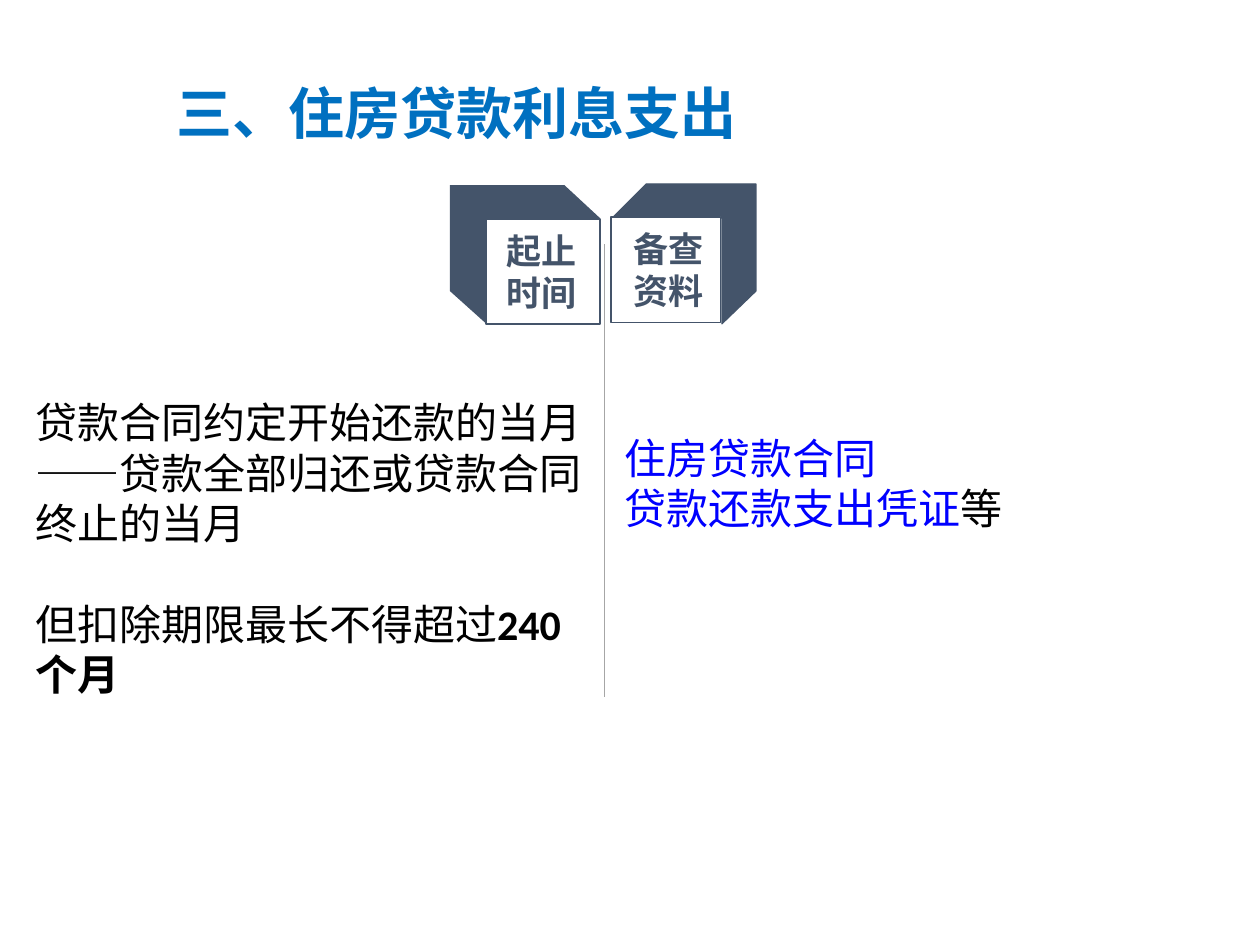
"""Build a slide on the period and records for housing loan interest."""
from lxml import etree
from pptx import Presentation
from pptx.dml.color import RGBColor
from pptx.enum.shapes import MSO_CONNECTOR, MSO_SHAPE
from pptx.enum.text import MSO_ANCHOR, MSO_AUTO_SIZE, PP_ALIGN
from pptx.oxml.ns import qn
from pptx.util import Inches, Pt

CJK = "Noto Sans CJK SC"
SLATE, BLACK, BLUE, WHITE = "44546A", "000000", "0000FF", "FFFFFF"


def rgb(value):
    return RGBColor.from_string(value)


def add_run(p, text, size, color, font, bold=False):
    r = p.add_run()
    r.text = text
    r.font.size, r.font.bold, r.font.name = Pt(size), bold, font
    r.font.color.rgb = rgb(color)
    etree.SubElement(r._r.get_or_add_rPr(), qn("a:ea")).set("typeface", CJK)


prs = Presentation()
prs.slide_width, prs.slide_height = Inches(10), Inches(7.5)
s = prs.slides.add_slide(prs.slide_layouts[5])

title = s.shapes.title
title.left, title.top, title.width, title.height = map(Inches, (1.3, 0.45, 7.84, 0.61))
tf = title.text_frame
tf.auto_size = MSO_AUTO_SIZE.NONE
tf.vertical_anchor = MSO_ANCHOR.MIDDLE
p = tf.paragraphs[0]
p.alignment, p.line_spacing = PP_ALIGN.LEFT, 1.5
add_run(p, "三、住房贷款利息支出", 32, "0070C0", CJK, True)

divider = s.shapes.add_connector(
    MSO_CONNECTOR.STRAIGHT, Inches(4.8), Inches(1.94), Inches(4.8), Inches(5.53))
divider.line.color.rgb, divider.line.width = rgb("A6A6A6"), Pt(0.5)
etree.SubElement(divider._element.spPr, qn("a:effectLst"))

folds = [
    [(3.57, 1.47), (3.57, 2.31), (3.86, 2.57), (3.86, 1.73), (4.76, 1.73), (4.48, 1.47)],
    [(6, 1.46), (6, 2.31), (5.73, 2.57), (5.73, 1.73), (4.86, 1.73), (5.13, 1.46)],
]
faces = [(3.86, 1.74, 0.9, 0.83), (4.85, 1.72, 0.87, 0.84)]
for outline, face, edge in zip(folds, faces, (0, 0.75)):
    points = [(Inches(x), Inches(y)) for x, y in outline]
    fb = s.shapes.build_freeform(*points[0])
    fb.add_line_segments(points[1:], close=True)
    fold = fb.convert_to_shape()
    front = s.shapes.add_shape(MSO_SHAPE.RECTANGLE, *map(Inches, face))
    for sp, fill, width in ((fold, SLATE, edge), (front, WHITE, 1)):
        sp.shadow.inherit = False
        sp.fill.solid()
        sp.fill.fore_color.rgb = rgb(fill)
        if width:
            sp.line.color.rgb, sp.line.width = rgb(SLATE), Pt(width)
        else:
            sp.line.fill.background()

texts = [
    ((0.18, 3.1, 4.58, 2.52), True, 24, 28.8, [
        [("贷款合同约定开始还款的当月", BLACK, "Arial", False),
         ("——", BLACK, "Calibri", False),
         ("贷款全部归还或贷款合同终止的当月", BLACK, "Arial", False)],
        [("但扣除期限最长不得超过", BLACK, "Arial", False),
         ("240", BLACK, "Calibri", True),
         ("个月", BLACK, "Arial", True)]]),
    ((4.86, 3.38, 4.8, 0.91), True, 24, 0, [
        [("住房贷款合同", BLUE, "Arial", False)],
        [("贷款还款支出凭证", BLUE, "Arial", False), ("等", BLACK, "Arial", False)]]),
    ((3.92, 1.77, 0.76, 0.77), False, 20, 0, [
        [("起止", SLATE, CJK, True)], [("时间", SLATE, CJK, True)]]),
    ((4.93, 1.76, 0.76, 0.77), False, 20, 0, [
        [("备查", SLATE, CJK, True)], [("资料", SLATE, CJK, True)]]),
]
for box, wrap, size, gap, paragraphs in texts:
    tf = s.shapes.add_textbox(*map(Inches, box)).text_frame
    tf.word_wrap = wrap
    tf.auto_size = MSO_AUTO_SIZE.SHAPE_TO_FIT_TEXT
    for i, runs in enumerate(paragraphs):
        p = tf.add_paragraph() if i else tf.paragraphs[0]
        if i and gap:
            p.space_before = Pt(gap)
        for text, color, font, bold in runs:
            add_run(p, text, size, color, font, bold)

prs.save("out.pptx")
